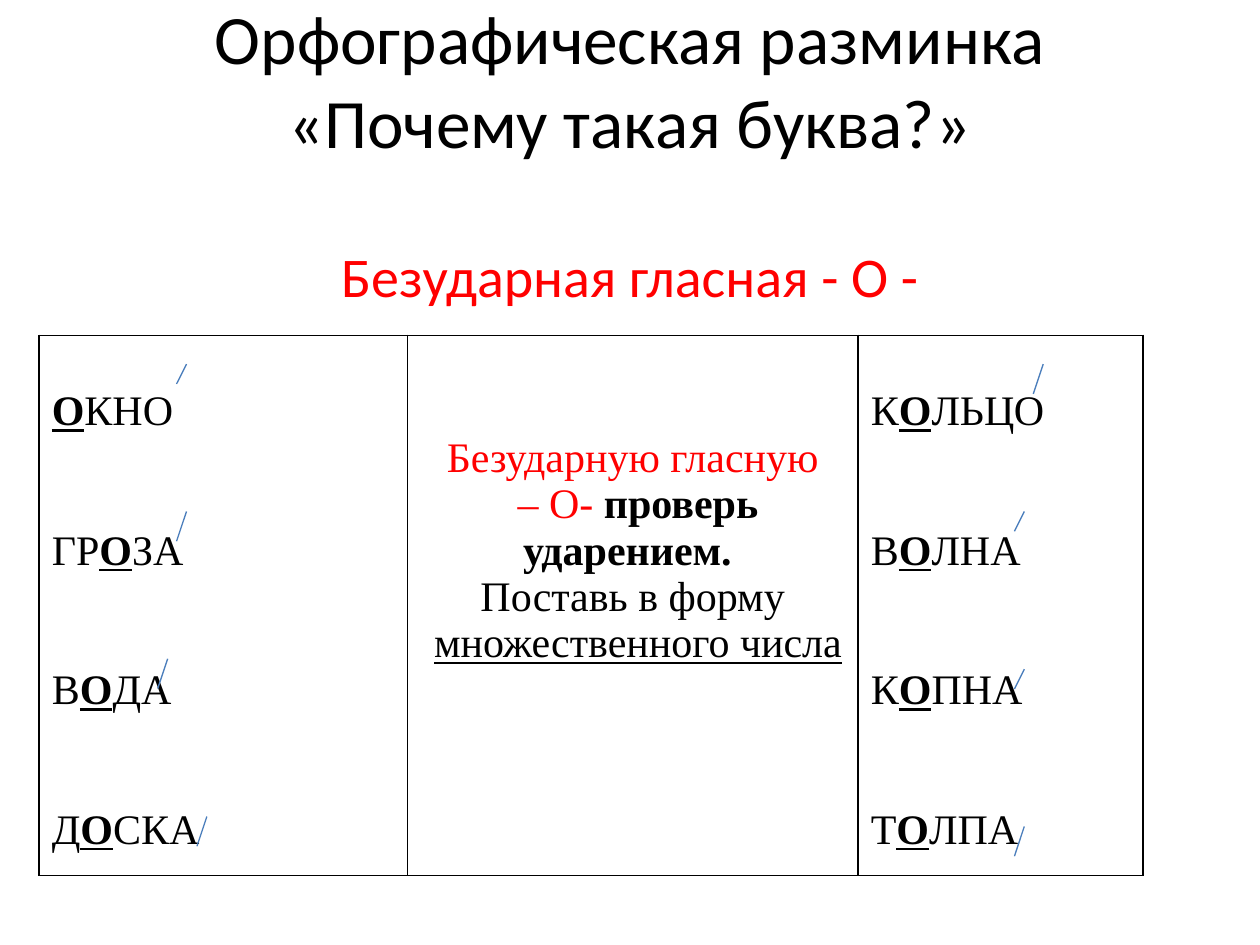
from lxml.etree import SubElement
from pptx import Presentation
from pptx.dml.color import RGBColor
from pptx.enum.shapes import MSO_CONNECTOR
from pptx.enum.text import MSO_ANCHOR, PP_ALIGN
from pptx.oxml.ns import qn
from pptx.util import Cm, Pt

COLORS = {"text": "000000", "accent": "FF0000", "stress": "4B7EBC", "border": "000000"}
HEADING_FONT, TABLE_FONT = "Calibri", "Times New Roman"
LINE_HEIGHT = Pt(26.6)
CELL_MARGIN = Cm(0.13)

# Each word is split around its unstressed vowel.
LEFT_WORDS = [("", "КНО"), ("ГР", "ЗА"), ("В", "ДА"), ("Д", "СКА")]
RIGHT_WORDS = [("К", "ЛЬЦО"), ("В", "ЛНА"), ("К", "ПНА"), ("Т", "ЛПА")]

# Right end, top and height of each stress mark, in centimetres.
STRESS_MARKS = [
    (3.76, 7.34, 0.4), (3.76, 10.31, 0.6), (3.38, 13.28, 0.6), (4.17, 16.46, 0.6),
    (21.03, 7.34, 0.6), (20.65, 10.31, 0.4), (20.65, 13.49, 0.4), (20.65, 16.66, 0.6),
]


def add_text(paragraph, text, font=TABLE_FONT, size=24, color="text", bold=False, underline=False):
    """Add one formatted run; a line feed in the text becomes a line break."""
    for index, line in enumerate(text.split("\n")):
        if index:
            paragraph.add_line_break()
        run = paragraph.add_run()
        run.text = line
        run.font.name = font
        run.font.size = Pt(size)
        run.font.bold = bold
        run.font.underline = underline
        run.font.color.rgb = RGBColor.from_string(COLORS[color])


def add_heading(slide, box, text, anchor=MSO_ANCHOR.TOP, **text_format):
    frame = slide.shapes.add_textbox(*map(Cm, box)).text_frame
    frame.word_wrap = True
    frame.vertical_anchor = anchor
    paragraph = frame.paragraphs[0]
    paragraph.alignment = PP_ALIGN.CENTER
    add_text(paragraph, text, font=HEADING_FONT, **text_format)


def add_paragraphs(cell, count):
    """Return the given number of paragraphs of an empty cell."""
    frame = cell.text_frame
    return [frame.paragraphs[0]] + [frame.add_paragraph() for _ in range(count - 1)]


def fill_words(cell, words):
    cell.margin_top = CELL_MARGIN + LINE_HEIGHT
    for index, (paragraph, (start, end)) in enumerate(zip(add_paragraphs(cell, len(words)), words)):
        if index:
            paragraph.space_before = 2 * LINE_HEIGHT
        if start:
            add_text(paragraph, start)
        add_text(paragraph, "О", bold=True, underline=True)
        add_text(paragraph, end)


def fill_rule(cell):
    cell.margin_top = CELL_MARGIN + 2 * LINE_HEIGHT
    lines = [
        [("Безударную гласную", {"color": "accent"})],
        [(" – О- ", {"color": "accent"}), ("проверь ударением. ", {"bold": True})],
        [("Поставь в форму", {})],
        [(" ", {}), ("множественного числа", {"underline": True})],
    ]
    for paragraph, line in zip(add_paragraphs(cell, len(lines)), lines):
        paragraph.alignment = PP_ALIGN.CENTER
        for text, text_format in line:
            add_text(paragraph, text, **text_format)


def set_borders(cell):
    properties = cell._tc.get_or_add_tcPr()
    for position, side in enumerate(("lnL", "lnR", "lnT", "lnB")):
        line = SubElement(properties, qn(f"a:{side}"), w=str(Pt(1)))
        fill = SubElement(line, qn("a:solidFill"))
        SubElement(fill, qn("a:srgbClr"), val=COLORS["border"])
        properties.insert(position, line)


def add_word_table(slide):
    widths = [Cm(7.42), Cm(9.09), Cm(5.74)]
    table = slide.shapes.add_table(1, 3, Cm(0.79), Cm(6.76), sum(widths), Cm(10.55)).table
    table.first_row = table.horz_banding = False
    for column, width in zip(table.columns, widths):
        column.width = width
    left, middle, right = table.rows[0].cells
    for cell in (left, middle, right):
        cell.fill.background()
        cell.margin_bottom = CELL_MARGIN
        set_borders(cell)
    fill_words(left, LEFT_WORDS)
    fill_rule(middle)
    fill_words(right, RIGHT_WORDS)


def add_stress_mark(slide, right, top, height):
    mark = slide.shapes.add_connector(
        MSO_CONNECTOR.STRAIGHT, Cm(right), Cm(top), Cm(right - 0.2), Cm(top + height))
    mark.line.color.rgb = RGBColor.from_string(COLORS["stress"])
    mark.line.width = Pt(0.75)
    SubElement(mark._element.spPr, qn("a:effectLst"))


def main():
    presentation = Presentation()
    presentation.slide_width, presentation.slide_height = Cm(25.4), Cm(19.05)
    slide = presentation.slides.add_slide(presentation.slide_layouts[6])
    add_heading(slide, (1.9, 0.79, 21.6, 1.6), "Орфографическая разминка\n«Почему такая буква?»",
                anchor=MSO_ANCHOR.MIDDLE, size=39.6)
    add_heading(slide, (3.81, 4.75, 17.78, 10.9), "Безударная гласная - О -", size=32, color="accent")
    add_word_table(slide)
    for stress_mark in STRESS_MARKS:
        add_stress_mark(slide, *stress_mark)
    presentation.save("out.pptx")


if __name__ == "__main__":
    main()
